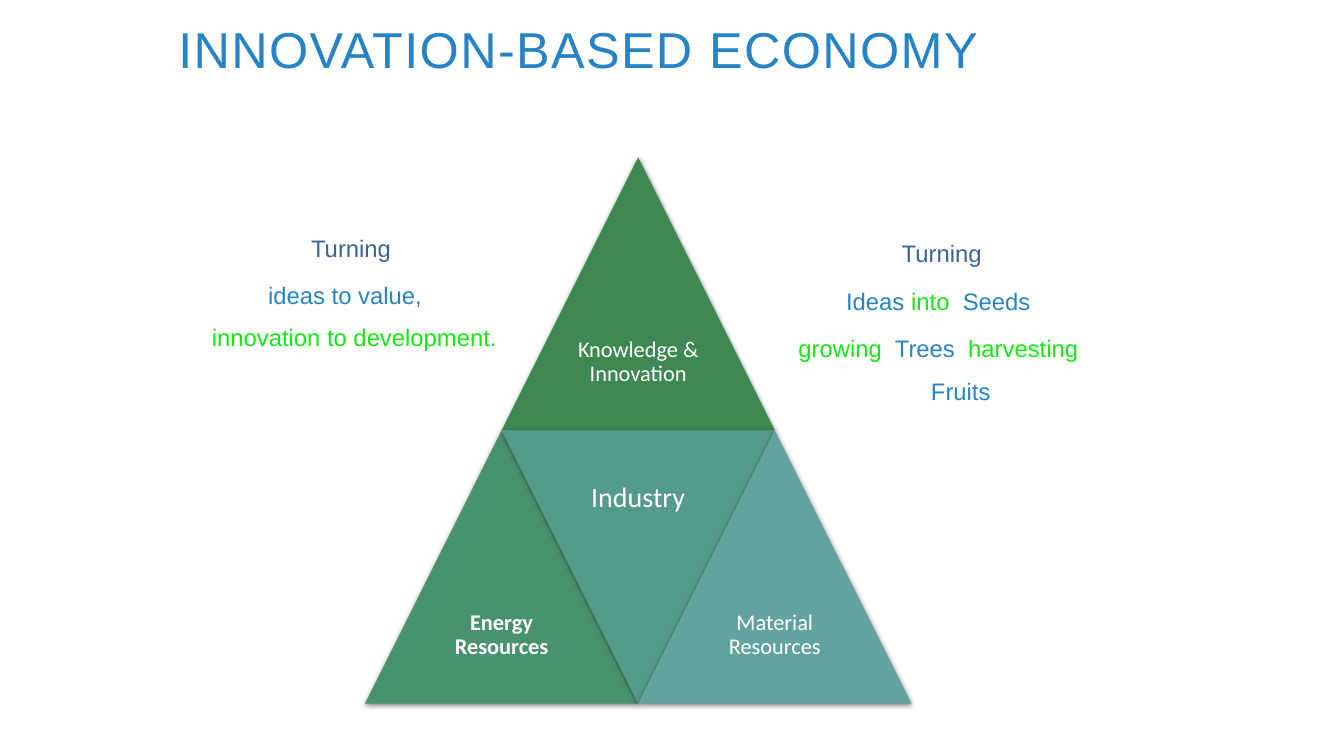
from dataclasses import dataclass

from lxml import etree
from pptx import Presentation
from pptx.dml.color import RGBColor
from pptx.enum import shapes, text
from pptx.oxml.ns import qn
from pptx.util import Inches, Pt


@dataclass(frozen=True)
class Theme:
    heading_font: str = "Arial"
    label_font: str = "Calibri"
    blue: str = "2683C6"
    navy: str = "39639D"
    lime: str = "10EA10"
    white: str = "FFFFFF"
    shadow: str = "000000"
    title_size: float = 36
    side_size: float = 17


T = Theme()

TITLE = "INNOVATION-BASED ECONOMY"

# label, column and row in half sides, fill, upside down, type size, bold
TRIANGLES = [
    ("Knowledge & Innovation", 1, 0, "3E8853", False, 16, False),
    ("Energy Resources", 0, 2, "49926E", False, 16, True),
    ("Industry", 1, 2, "549C88", True, 20, False),
    ("Material Resources", 2, 2, "62A39F", False, 16, False),
]
PYRAMID_LEFT, PYRAMID_TOP, SIDE = 3.62, 1.56, 2.71

# left margin, first-line indent, line spacing
TIGHT = (0.4, -0.28, 1.3)
LOOSE = (0.38, -0.38, 1.5)

# box, then paragraphs: layout and coloured runs
SIDE_TEXTS = [
    ((1.39, 2.18, 4.13, 1.5), [
        (TIGHT, [("Turning ", T.navy)]),
        (LOOSE, [("ideas to value, ", T.blue)]),
        (TIGHT, [("innovation to development.", T.lime)]),
    ]),
    ((7.61, 2.18, 3.46, 1.5), [
        (LOOSE, [("Turning", T.navy)]),
        (LOOSE, [("Ideas ", T.blue), ("into", T.lime), ("  Seeds ", T.blue)]),
        (LOOSE, [("growing ", T.lime), (" Trees  ", T.blue),
                 ("harvesting ", T.lime), (" Fruits", T.blue)]),
    ]),
]


def add_text_frame(parent, box, anchor=text.MSO_ANCHOR.TOP):
    tf = parent.add_textbox(*map(Inches, box)).text_frame
    tf.word_wrap = True
    tf.vertical_anchor = anchor
    return tf


def set_font(font, name, size, color=None, bold=False):
    font.name, font.size, font.bold = name, Pt(size), bold
    if color:
        font.color.rgb = RGBColor.from_string(color)


def add_soft_shadow(sp):
    sp.shadow.inherit = False
    effects = sp._element.spPr.find(qn("a:effectLst"))
    shadow = etree.SubElement(effects, qn("a:outerShdw"), blurRad=str(Pt(4)),
                              dist=str(Pt(1)), dir="5400000", rotWithShape="0")
    color = etree.SubElement(shadow, qn("a:srgbClr"), val=T.shadow)
    etree.SubElement(color, qn("a:alpha"), val="50000")


def add_title(s):
    tf = add_text_frame(s.shapes, (1.67, 0, 9.33, 1.07), text.MSO_ANCHOR.MIDDLE)
    p = tf.paragraphs[0]
    p.line_spacing = 0.8
    r = p.add_run()
    r.text = TITLE
    set_font(r.font, T.heading_font, T.title_size, T.blue)
    r.font._element.set("spc", "100")


def add_triangle(group, label, col, row, fill, flipped, size, bold):
    half = SIDE / 2
    x, y = PYRAMID_LEFT + col * half, PYRAMID_TOP + row * half
    sp = group.shapes.add_shape(shapes.MSO_SHAPE.ISOSCELES_TRIANGLE,
                                *map(Inches, (x, y, SIDE, SIDE)))
    sp.rotation = 180 if flipped else 0
    sp.fill.solid()
    sp.fill.fore_color.rgb = RGBColor.from_string(fill)
    sp.line.fill.background()
    add_soft_shadow(sp)

    label_top = y if flipped else y + half
    tf = add_text_frame(group.shapes, (x + half / 2, label_top, half, half),
                        text.MSO_ANCHOR.MIDDLE)
    tf.margin_left = tf.margin_right = Inches(0.07)
    tf.margin_top = tf.margin_bottom = Inches(0.07)
    p = tf.paragraphs[0]
    p.text = label
    p.alignment = text.PP_ALIGN.CENTER
    p.line_spacing = 0.9
    p.space_after = Pt(0.35 * size)
    set_font(p.font, T.label_font, size, T.white, bold)


def add_side_text(s, box, paragraphs):
    tf = add_text_frame(s.shapes, box)
    for i, ((margin, indent, spacing), runs) in enumerate(paragraphs):
        p = tf.add_paragraph() if i else tf.paragraphs[0]
        p.alignment = text.PP_ALIGN.CENTER
        p.line_spacing = spacing
        p.space_before = Pt(0.2 * T.side_size)
        pPr = p._p.get_or_add_pPr()
        pPr.set("marL", str(Inches(margin)))
        pPr.set("indent", str(Inches(indent)))
        set_font(p.font, T.heading_font, T.side_size)
        for words, color in runs:
            r = p.add_run()
            r.text = words
            r.font.color.rgb = RGBColor.from_string(color)


def main():
    prs = Presentation()
    prs.slide_width, prs.slide_height = Inches(13.33), Inches(7.5)
    s = prs.slides.add_slide(prs.slide_layouts[6])
    add_title(s)
    pyramid = s.shapes.add_group_shape()
    for triangle in TRIANGLES:
        add_triangle(pyramid, *triangle)
    for box, paragraphs in SIDE_TEXTS:
        add_side_text(s, box, paragraphs)
    prs.save("out.pptx")


if __name__ == "__main__":
    main()
